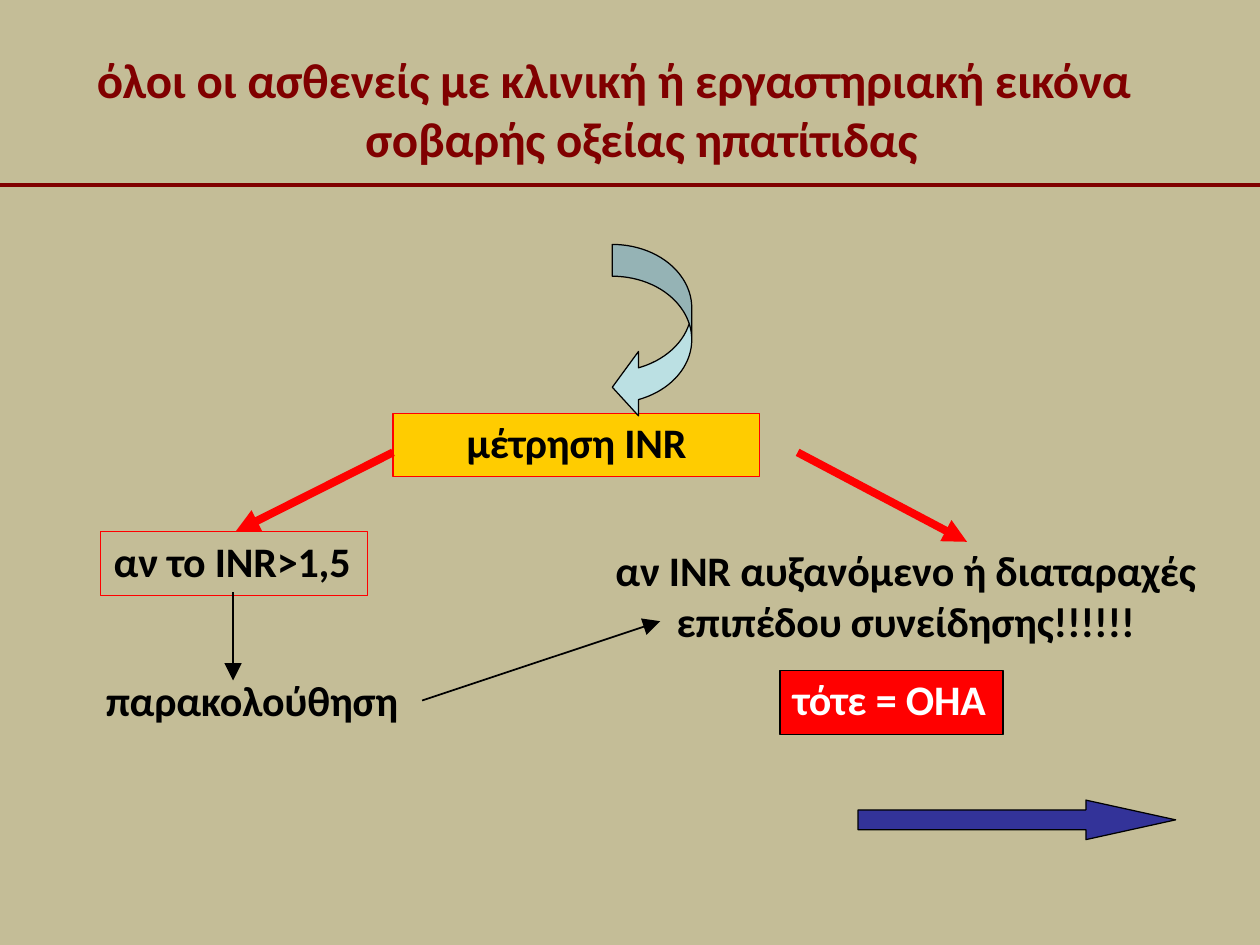
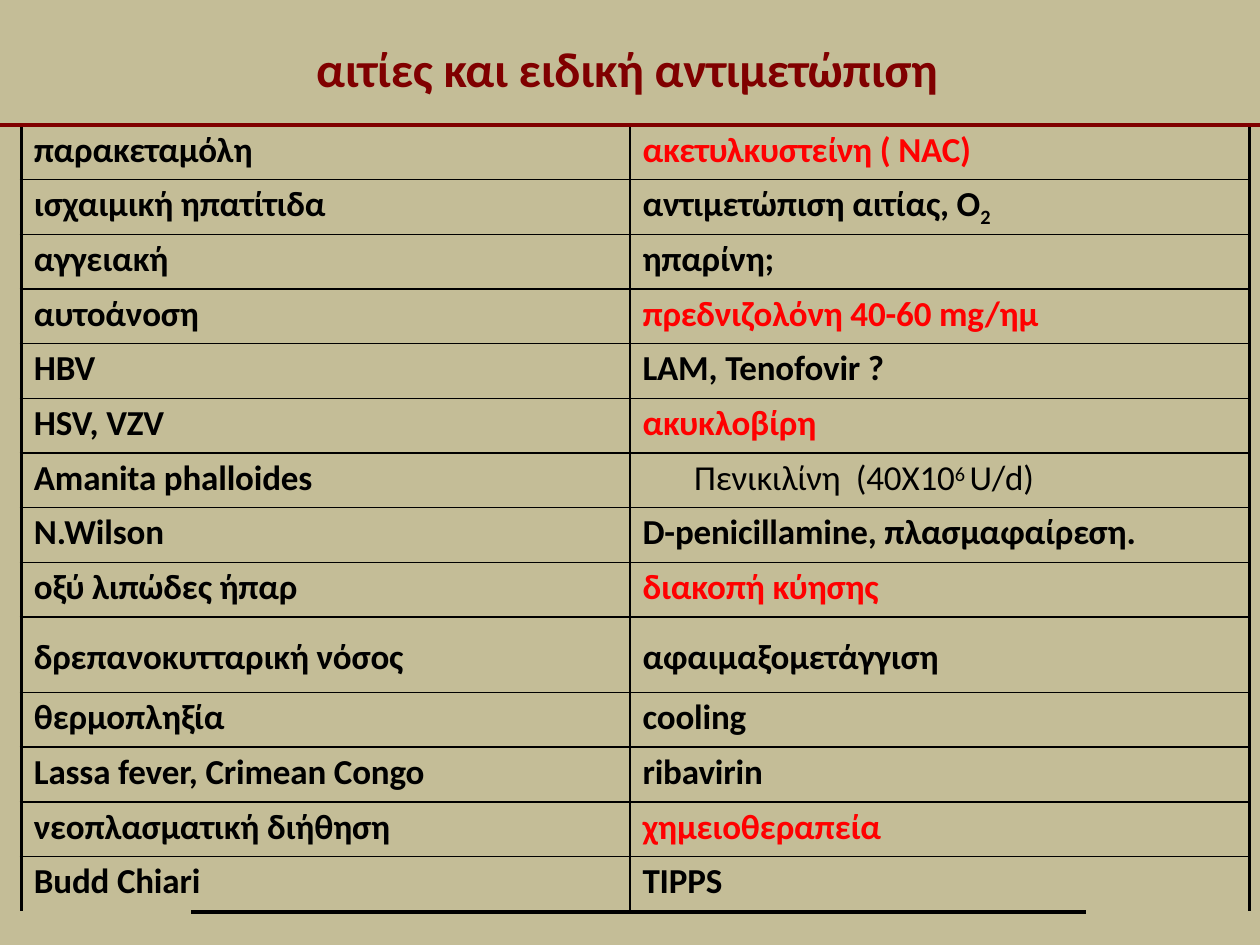
from pptx import Presentation
from pptx.dml.color import RGBColor
from pptx.enum import shapes, text
from pptx.oxml import ns
from pptx.util import Pt
from lxml import etree

BACKGROUND = RGBColor(0xC4, 0xBD, 0x97)
MAROON = RGBColor(0x80, 0x00, 0x00)
BLACK = RGBColor(0, 0, 0)
WHITE = RGBColor(0xFF, 0xFF, 0xFF)
RED = RGBColor(0xFF, 0, 0)
YELLOW = RGBColor(0xFF, 0xCC, 0x00)
BLUE = RGBColor(0x33, 0x33, 0x99)
PALE_BLUE = RGBColor(0xBB, 0xE0, 0xE3)

FONT = "Calibri"
SLIDE_W, SLIDE_H = 720, 540
SUB, SUPER = -21000, 26000
TABLE_TOP, ROW_H, TALL_ROW_H = 71.4, 31.25, 43.2
COLUMN_WIDTHS = (347.8, 354.2)
TALL_ROW = "δρεπανοκυτταρική νόσος"
PLAIN_ROW = "Amanita phalloides"

# Cause, treatment as (text, baseline) runs, treatment colour
TREATMENTS = [
    ("παρακεταμόλη", [("ακετυλκυστείνη ( NAC)", 0)], RED),
    ("ισχαιμική ηπατίτιδα", [("αντιμετώπιση αιτίας, Ο", 0), ("2", SUB)], BLACK),
    ("αγγειακή", [("ηπαρίνη;", 0)], BLACK),
    ("αυτοάνοση", [("πρεδνιζολόνη 40-60 mg/ημ", 0)], RED),
    ("HBV", [("LAM, Tenofovir ?", 0)], BLACK),
    ("HSV, VZV", [("ακυκλοβίρη", 0)], RED),
    (PLAIN_ROW, [("Πενικιλίνη  (40X10", 0), ("6 ", SUPER), ("U/d)", 0)], BLACK),
    ("N.Wilson", [("D-penicillamine, πλασμαφαίρεση.", 0)], BLACK),
    ("οξύ λιπώδες ήπαρ", [("διακοπή κύησης", 0)], RED),
    (TALL_ROW, [("αφαιμαξομετάγγιση", 0)], BLACK),
    ("θερμοπληξία", [("cooling", 0)], BLACK),
    ("Lassa fever, Crimean Congo", [("ribavirin", 0)], BLACK),
    ("νεοπλασματική διήθηση", [("χημειοθεραπεία", 0)], RED),
    ("Budd Chiari", [("TIPPS", 0)], BLACK),
]


def add_slide(prs):
    s = prs.slides.add_slide(prs.slide_layouts[6])
    s.background.fill.solid()
    s.background.fill.fore_color.rgb = BACKGROUND
    return s


def write(p, runs, size, color=BLACK, bold=True):
    """Fill a paragraph with (text, baseline) runs in one font."""
    for content, baseline in runs:
        r = p.add_run()
        r.text = content
        if baseline:
            r.font._element.set("baseline", str(baseline)) if hasattr(
                r.font, "_element") else r._r.get_or_add_rPr().set("baseline", str(baseline))
    f = p.font
    f.name, f.size, f.bold = FONT, Pt(size), bold
    f.color.rgb = color
    p._p.pPr.find(ns.qn("a:defRPr")).set("spc", "-10")


def set_frame(tf, left=0, top=0):
    tf.word_wrap = True
    tf.vertical_anchor = text.MSO_ANCHOR.TOP
    tf.margin_left, tf.margin_top = Pt(left), Pt(top)
    tf.margin_right = tf.margin_bottom = 0


def add_text(s, box, content, size=24, color=BLACK, hang=0):
    """Text box whose lines after the first are indented by hang."""
    tf = s.shapes.add_textbox(*map(Pt, box)).text_frame
    set_frame(tf, left=0.7, top=1)
    p = tf.paragraphs[0]
    p.space_before = Pt(1)
    write(p, [(content, 0)], size, color)
    if hang:
        p._p.pPr.set("marL", str(Pt(hang)))
        p._p.pPr.set("indent", str(-Pt(hang)))


def add_line(s, start, end, color, width, head=None):
    """Straight line; head is the size of its arrowhead, 'med' or 'lg'."""
    line = s.shapes.add_connector(
        shapes.MSO_CONNECTOR.STRAIGHT, *map(Pt, start + end))
    line.line.color.rgb = color
    line.line.width = Pt(width)
    if head:
        etree.SubElement(line.line._get_or_add_ln(), ns.qn("a:tailEnd"),
                         type="triangle", w=head, len=head)
    etree.SubElement(line._element.spPr, ns.qn("a:effectLst"))


def add_title(s, box, content, rule_y, hang=0):
    add_text(s, box, content, 28, MAROON, hang)
    add_line(s, (0, rule_y), (SLIDE_W, rule_y), MAROON, 2.28)


def add_preset(s, kind, box, fill, line=BLACK, adjustments=()):
    sp = s.shapes.add_shape(kind, *map(Pt, box))
    sp.shadow.inherit = False
    for i, value in enumerate(adjustments):
        sp.adjustments[i] = value
    if fill is None:
        sp.fill.background()
    else:
        sp.fill.solid()
        sp.fill.fore_color.rgb = fill
    sp.line.color.rgb = line
    sp.line.width = Pt(0.72)
    return sp


def add_box(s, box, content, fill, line, color=BLACK, left=7.4,
            align=text.PP_ALIGN.LEFT):
    tf = add_preset(s, shapes.MSO_SHAPE.RECTANGLE, box, fill, line).text_frame
    set_frame(tf, left=left, top=2)
    p = tf.paragraphs[0]
    p.alignment = align
    p.space_before = Pt(2)
    write(p, [(content, 0)], 24, color)


def set_borders(cell, **widths):
    """Border widths by side (L, R, T, B); 0 hides a side."""
    tc_pr = cell._tc.get_or_add_tcPr()
    for side in "LRTB":
        ln = etree.SubElement(tc_pr, ns.qn(f"a:ln{side}"), w=str(Pt(widths[side])))
        if widths[side]:
            fill = etree.SubElement(ln, ns.qn("a:solidFill"))
            etree.SubElement(fill, ns.qn("a:srgbClr"), val=str(BLACK))
        else:
            etree.SubElement(ln, ns.qn("a:noFill"))


def add_treatment_table(s):
    last = len(TREATMENTS) - 1
    height = last * ROW_H + TALL_ROW_H
    table = s.shapes.add_table(
        last + 1, 2, Pt(12.2), Pt(TABLE_TOP), Pt(sum(COLUMN_WIDTHS)), Pt(height)).table
    table.first_row = table.horz_banding = False
    for column, width in zip(table.columns, COLUMN_WIDTHS):
        column.width = Pt(width)
    for i, (cause, treatment, color) in enumerate(TREATMENTS):
        tall, plain = cause == TALL_ROW, cause == PLAIN_ROW
        table.rows[i].height = Pt(TALL_ROW_H if tall else ROW_H)
        contents = ([(cause, 0)], BLACK, True), (treatment, color, not plain)
        for j, (runs, shade, bold) in enumerate(contents):
            cell = table.cell(i, j)
            set_borders(cell, L=1 if j else 2.25, R=2.25 if j else 1,
                        T=int(i > 0), B=int(i < last))
            cell.fill.background()
            cell.margin_left = Pt(7.2 if bold else 36.7)
            cell.margin_top = Pt(10.8 if tall else 2.2)
            cell.margin_right = cell.margin_bottom = 0
            write(cell.text_frame.paragraphs[0], runs, 20, shade, bold)


def build_inr_slide(prs):
    s = add_slide(prs)
    add_title(s, (54.7, 27.4, 601.2, 69),
              "όλοι οι ασθενείς με κλινική ή εργαστηριακή εικόνα σοβαρής οξείας ηπατίτιδας",
              105.8, hang=153.4)
    add_box(s, (224.6, 236.2, 209.6, 36.2), "μέτρηση INR", YELLOW, RED,
            left=0, align=text.PP_ALIGN.CENTER)
    add_box(s, (57.6, 303.8, 152.6, 36.5), "αν το INR>1,5", None, RED)
    add_text(s, (59.8, 384.5, 170, 31), "παρακολούθηση")
    add_text(s, (351, 310.3, 336.2, 60),
             "αν INR αυξανόμενο ή διαταραχές επιπέδου συνείδησης!!!!!!", hang=35)
    add_box(s, (445.7, 383, 127.5, 36.7), "τότε = ΟΗΑ", RED, BLACK, WHITE)
    add_preset(s, shapes.MSO_SHAPE.RIGHT_ARROW, (490.3, 457.2, 181.5, 22.6), BLUE,
               adjustments=(0.5, 2.27))
    add_preset(s, shapes.MSO_SHAPE.CURVED_LEFT_ARROW, (349.9, 139.7, 45.4, 100), PALE_BLUE,
               adjustments=(0.4, 0.81, 0.33))
    add_line(s, (224.6, 258.5), (134.6, 303.8), RED, 4.56, "med")
    add_line(s, (455.8, 258.5), (552.6, 309.6), RED, 4.56, "med")
    add_line(s, (133.2, 338.4), (133.2, 388.8), BLACK, 1, "lg")
    add_line(s, (241.2, 400.3), (377.3, 355), BLACK, 1, "lg")


def build_treatment_slide(prs):
    s = add_slide(prs)
    add_treatment_table(s)
    add_line(s, (109.4, 521.2), (620.6, 521.2), BLACK, 2.25)
    add_title(s, (180, 20.9, 362.2, 35.3), "αιτίες και ειδική αντιμετώπιση", TABLE_TOP)


def main():
    prs = Presentation()
    prs.slide_width, prs.slide_height = Pt(SLIDE_W), Pt(SLIDE_H)
    build_inr_slide(prs)
    build_treatment_slide(prs)
    prs.save("out.pptx")


if __name__ == "__main__":
    main()
